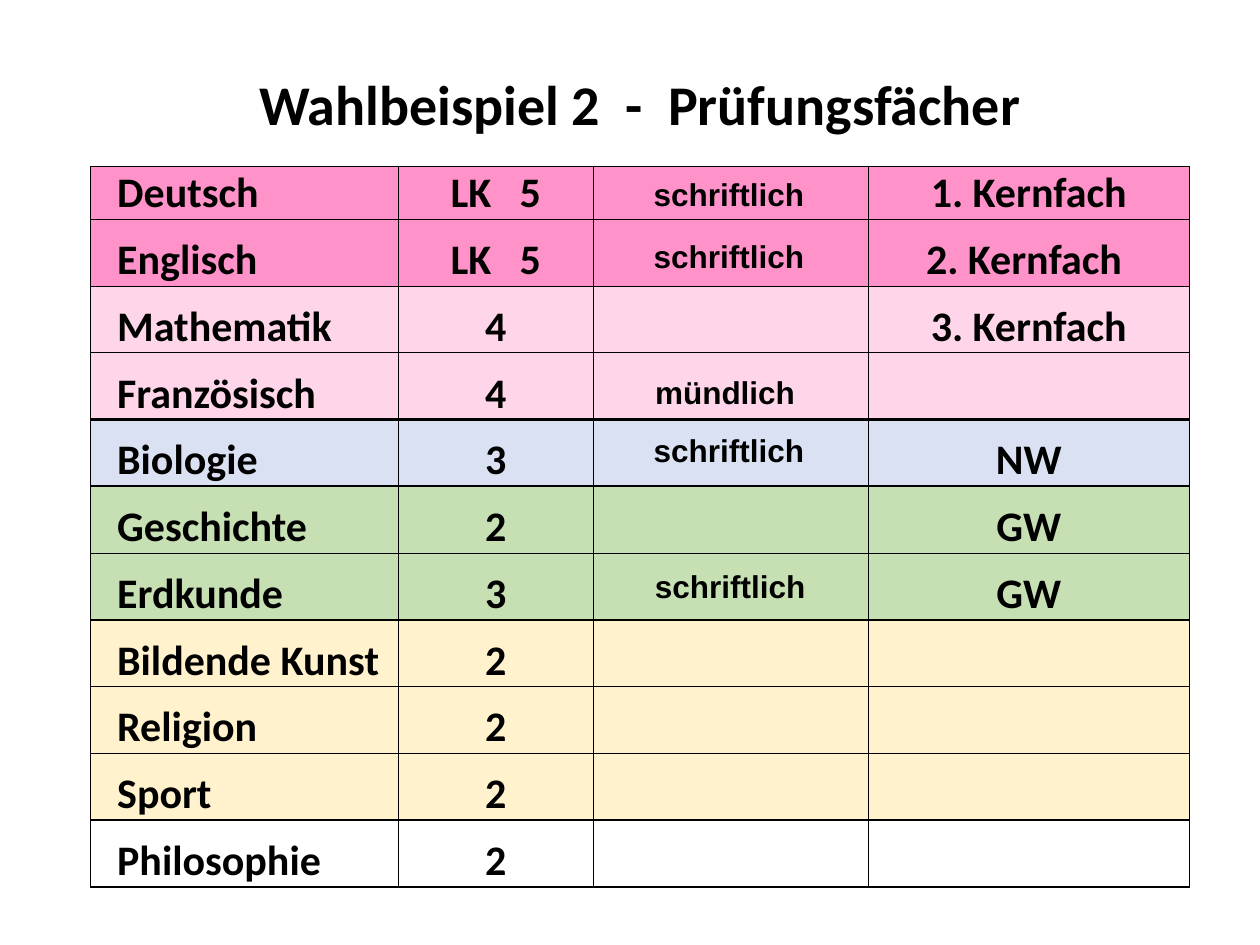
"""Builds the slide that lists the chosen examination subjects in a table."""
import dataclasses
import typing

import lxml.etree
import pptx
import pptx.dml.color
import pptx.enum.text
import pptx.oxml.ns
import pptx.table
import pptx.util

Inches = pptx.util.Inches
Align = pptx.enum.text.PP_ALIGN


@dataclasses.dataclass(frozen=True)
class Theme:
    text: str = "000000"
    advanced: str = "FF93C9"
    core: str = "FFD5EA"
    science: str = "D9E1F2"
    society: str = "C6E0B4"
    general: str = "FFF2CC"
    table_font: str = "Calibri"
    label_font: str = "Arial"
    title_size: int = 32
    table_size: int = 24
    label_size: int = 18
    empty_size: int = 8
    thin: float = 0.5
    thick: float = 1.5


THEME = Theme()


class Subject(typing.NamedTuple):
    name: str
    hours: str
    field: str
    fill: str | None
    bottom: float = THEME.thin


class ExamLabel(typing.NamedTuple):
    text: str
    left: float
    top: float


TITLE = "Wahlbeispiel 2  -  Prüfungsfächer"
SUBJECTS = [
    Subject("Deutsch", "LK   5", "1. Kernfach", THEME.advanced),
    Subject("Englisch", "LK   5", "2. Kernfach ", THEME.advanced),
    Subject("Mathematik", "4", "3. Kernfach", THEME.core),
    Subject("Französisch", "4", "", THEME.core, THEME.thick),
    Subject("Biologie", "3", "NW", THEME.science, THEME.thick),
    Subject("Geschichte", "2", "GW", THEME.society),
    Subject("Erdkunde", "3", "GW", THEME.society, THEME.thick),
    Subject("Bildende Kunst", "2", "", THEME.general),
    Subject("Religion", "2", "", THEME.general),
    Subject("Sport", "2", "", THEME.general, THEME.thick),
    Subject("Philosophie", "2", "", None, THEME.thick),
]
EXAM_LABELS = [
    ExamLabel("schriftlich", 4.75, 1.34),
    ExamLabel("schriftlich", 4.76, 4.45),
    ExamLabel("schriftlich", 4.75, 1.83),
    ExamLabel("schriftlich", 4.75, 3.37),
    ExamLabel("mündlich", 4.72, 2.91),
]
COLUMN_WIDTHS = [2.44, 1.55, 2.18, 2.55]
ROW_HEIGHTS = [0.62, 0.2, 0.42] + [0.53] * (len(SUBJECTS) - 1)
NAME_INDENT = 0.2


def style_paragraph(paragraph, text: str, font_name: str, size: int, alignment: Align) -> None:
    """Fill a paragraph with bold text."""
    paragraph.text = text
    paragraph.alignment = alignment
    paragraph.font.name = font_name
    paragraph.font.size = pptx.util.Pt(size)
    paragraph.font.bold = True
    paragraph.font.color.rgb = pptx.dml.color.RGBColor.from_string(THEME.text)


def set_borders(cell: pptx.table._Cell, side: float, top: float, bottom: float) -> None:
    """Set the border widths of a cell in points, where zero means no line."""
    properties = cell._tc.get_or_add_tcPr()
    for index, (tag, width) in enumerate(
        [("a:lnL", side), ("a:lnR", side), ("a:lnT", top), ("a:lnB", bottom)]
    ):
        line = lxml.etree.Element(pptx.oxml.ns.qn(tag), w=str(pptx.util.Pt(width)))
        if width:
            fill = lxml.etree.SubElement(line, pptx.oxml.ns.qn("a:solidFill"))
            lxml.etree.SubElement(fill, pptx.oxml.ns.qn("a:srgbClr"), val=THEME.text)
        else:
            lxml.etree.SubElement(line, pptx.oxml.ns.qn("a:noFill"))
        properties.insert(index, line)


def format_cell(
    cell: pptx.table._Cell,
    text: str,
    size: int,
    fill: str | None = None,
    alignment: Align = Align.CENTER,
    indent: float = 0,
) -> None:
    """Set the text, margins and fill of a cell."""
    cell.margin_left = cell.margin_right = cell.margin_top = Inches(0.01)
    cell.margin_bottom = Inches(0)
    cell.vertical_anchor = pptx.enum.text.MSO_ANCHOR.BOTTOM
    if fill:
        cell.fill.solid()
        cell.fill.fore_color.rgb = pptx.dml.color.RGBColor.from_string(fill)
    else:
        cell.fill.background()
    paragraph = cell.text_frame.paragraphs[0]
    if text:
        style_paragraph(paragraph, text, THEME.table_font, size, alignment)
        paragraph._p.get_or_add_pPr().set("marL", str(Inches(indent)))
    else:
        lxml.etree.SubElement(
            paragraph._p, pptx.oxml.ns.qn("a:endParaRPr"), sz=str(THEME.empty_size * 100)
        )


def add_subject_table(slide) -> None:
    """Add the table with its title row, spacer row and subject rows."""
    table = slide.shapes.add_table(
        len(ROW_HEIGHTS), len(COLUMN_WIDTHS), Inches(0.72), Inches(0.5),
        Inches(sum(COLUMN_WIDTHS)), Inches(sum(ROW_HEIGHTS)),
    ).table
    table.first_row = table.horz_banding = False
    for column, width in zip(table.columns, COLUMN_WIDTHS):
        column.width = Inches(width)
    for row, height in zip(table.rows, ROW_HEIGHTS):
        row.height = Inches(height)

    table.cell(0, 0).merge(table.cell(0, len(COLUMN_WIDTHS) - 1))
    for column, (title_cell, spacer_cell) in enumerate(zip(table.rows[0].cells, table.rows[1].cells)):
        format_cell(title_cell, "" if column else TITLE, THEME.title_size)
        set_borders(title_cell, 0, 0, 0)
        format_cell(spacer_cell, "", THEME.table_size)
        set_borders(spacer_cell, 0, 0, THEME.thin)

    top = THEME.thin
    for row_index, subject in enumerate(SUBJECTS, start=2):
        cells = list(table.rows[row_index].cells)
        format_cell(cells[0], subject.name, THEME.table_size, subject.fill, Align.LEFT, NAME_INDENT)
        for cell, text in zip(cells[1:], [subject.hours, "", subject.field]):
            format_cell(cell, text, THEME.table_size, subject.fill)
        for cell in cells:
            set_borders(cell, THEME.thin, top, subject.bottom)
        top = subject.bottom


def add_exam_label(slide, label: ExamLabel) -> None:
    """Add a text box that names the form of an examination."""
    box = slide.shapes.add_textbox(
        Inches(label.left), Inches(label.top), Inches(2.07), Inches(0.4)
    )
    box.text_frame.word_wrap = True
    box.text_frame.auto_size = pptx.enum.text.MSO_AUTO_SIZE.SHAPE_TO_FIT_TEXT
    style_paragraph(
        box.text_frame.paragraphs[0], label.text, THEME.label_font, THEME.label_size, Align.CENTER
    )


def main() -> None:
    """Build and save the presentation."""
    presentation = pptx.Presentation()
    presentation.slide_width = Inches(10)
    presentation.slide_height = Inches(7.5)
    slide = presentation.slides.add_slide(presentation.slide_layouts[6])
    add_subject_table(slide)
    for label in EXAM_LABELS:
        add_exam_label(slide, label)
    presentation.save("out.pptx")


if __name__ == "__main__":
    main()
